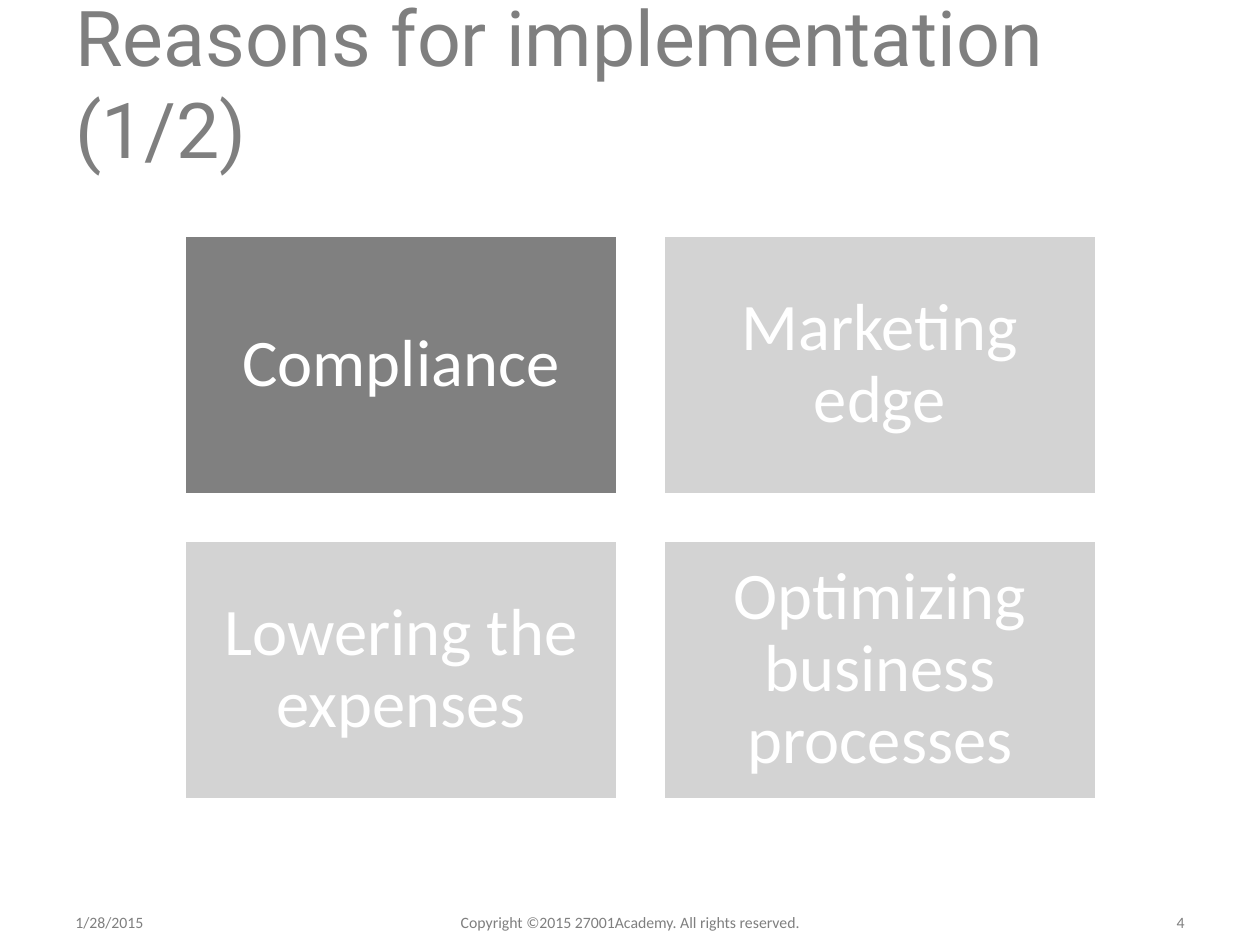
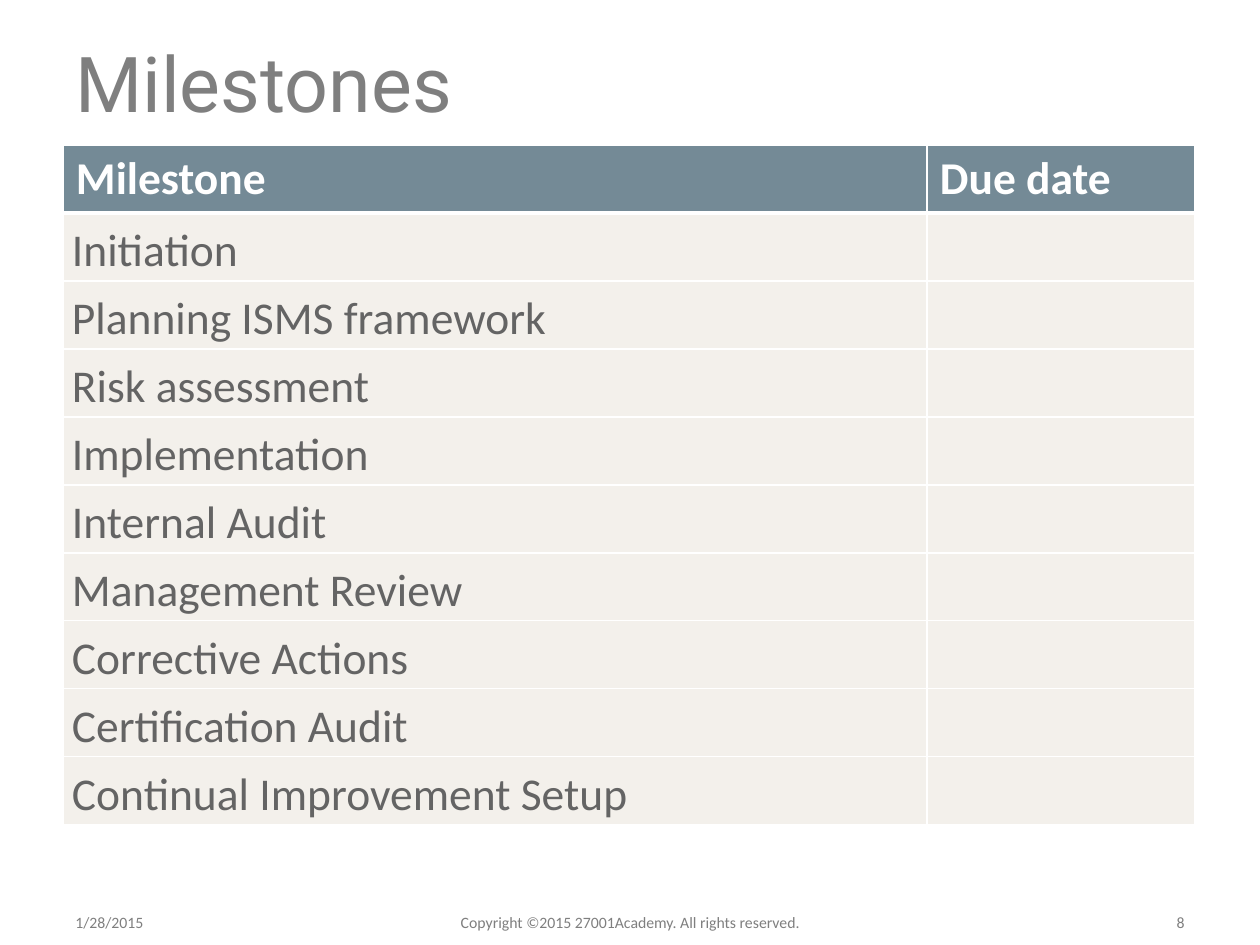
from lxml.etree import SubElement
from pptx import Presentation
from pptx.dml.color import RGBColor
from pptx.enum.shapes import MSO_SHAPE
from pptx.enum.text import MSO_ANCHOR, PP_ALIGN
from pptx.oxml.ns import qn
from pptx.util import Pt

EMU_PER_PX = 914400 / 126
COLORS = {
    "white": "FFFFFF",
    "muted": "7F7F7F",
    "card": "808080",
    "header": "748A96",
    "row": "F3F0EB",
    "body": "646464",
}
TITLE = {"name": "Roboto", "size": Pt(44), "color": "muted"}
FOOTER = {"name": "Calibri", "size": Pt(9), "color": "muted"}
CARD = {"name": "Calibri", "size": Pt(38), "color": "white"}
HEAD = {"name": "Calibri", "size": Pt(26), "color": "white", "bold": True}
BODY = {"name": "Calibri", "size": Pt(26), "color": "body", "bold": False}


def px(n):
    return round(n * EMU_PER_PX)


def rgb(name):
    return RGBColor.from_string(COLORS[name])


class Deck:
    def __init__(self):
        self.prs = Presentation()
        self.prs.slide_width, self.prs.slide_height = px(1260), px(945)

    def slide(self, title, number):
        self.s = self.prs.slides.add_slide(self.prs.slide_layouts[6])
        self.text(title, (63, 0, 1134, 164), TITLE)
        self.text("1/28/2015", (63, 899, 294, 46), FOOTER)
        self.text("Copyright ©2015 27001Academy. All rights reserved.",
                  (382, 899, 496, 46), FOOTER, PP_ALIGN.CENTER)
        self.text(str(number), (903, 899, 294, 46), FOOTER, PP_ALIGN.RIGHT)

    def put_text(self, tf, text, style, align=PP_ALIGN.LEFT, spacing=None):
        p = tf.paragraphs[0]
        p.alignment = align
        p.line_spacing = spacing
        r = p.add_run()
        r.text = text
        for key, value in style.items():
            if key == "color":
                r.font.color.rgb = rgb(value)
            else:
                setattr(r.font, key, value)

    def margins(self, target, x, y):
        target.margin_left = target.margin_right = px(x)
        target.margin_top = target.margin_bottom = px(y)

    def text(self, text, box, style, align=PP_ALIGN.LEFT):
        tf = self.s.shapes.add_textbox(*map(px, box)).text_frame
        tf.word_wrap = True
        tf.vertical_anchor = MSO_ANCHOR.MIDDLE
        self.put_text(tf, text, style, align)

    def rect(self, box, color):
        sp = self.s.shapes.add_shape(MSO_SHAPE.RECTANGLE, *map(px, box))
        sp.shadow.inherit = False
        sp.fill.solid()
        sp.fill.fore_color.rgb = rgb(color)
        sp.line.fill.background()
        return sp

    def card(self, text, box):
        sp = self.rect(box, "card")
        sp.line.color.rgb = rgb("white")
        sp.line.width = Pt(2)
        tf = sp.text_frame
        tf.word_wrap = True
        tf.vertical_anchor = MSO_ANCHOR.MIDDLE
        self.margins(tf, 20, 20)
        self.put_text(tf, text, CARD, PP_ALIGN.CENTER, 0.9)

    def veil(self, box, percent):
        sp = self.rect(box, "white")
        color = next(sp._element.spPr.iter(qn("a:srgbClr")))
        SubElement(color, qn("a:alpha"), val=str(percent * 1000))

    def borders(self, cell, widths):
        tcPr = cell._tc.get_or_add_tcPr()
        for side, width in widths.items():
            ln = SubElement(tcPr, qn(f"a:ln{side}"), w=str(int(Pt(width))))
            fill = SubElement(ln, qn("a:solidFill"))
            SubElement(fill, qn("a:srgbClr"), val=COLORS["white"])

    def table(self, left, top, widths, row_height, rows):
        box = (left, top, sum(widths), row_height * len(rows))
        table = self.s.shapes.add_table(len(rows), len(widths), *map(px, box)).table
        table.horz_banding = False
        for column, width in zip(table.columns, widths):
            column.width = px(width)
        for i, texts in enumerate(rows):
            table.rows[i].height = px(row_height)
            for j, text in enumerate(texts):
                cell = table.cell(i, j)
                self.borders(cell, {"L": 1, "R": 1, "T": 3 if i == 1 else 1,
                                    "B": 3 if i == 0 else 1})
                cell.fill.solid()
                cell.fill.fore_color.rgb = rgb("row" if i else "header")
                cell.vertical_anchor = MSO_ANCHOR.MIDDLE
                self.margins(cell, *((9, 0) if i else (13, 6)))
                if text:
                    self.put_text(cell.text_frame, text, BODY if i else HEAD,
                                  spacing=1.15 if i else None)


def reasons(deck):
    deck.slide("Reasons for implementation (1/2)", 4)
    names = ["Compliance", "Marketing edge", "Lowering the expenses",
             "Optimizing business processes"]
    for i, name in enumerate(names):
        row, col = divmod(i, 2)
        deck.card(name, (184 + 479 * col, 235 + 305 * row, 434, 260))
    for left, top in [(636, 224), (131, 522), (626, 522)]:
        deck.veil((left, top, 512, 277), 66)


def milestones(deck):
    deck.slide("Milestones", 8)
    names = ["Initiation", "Planning ISMS framework", "Risk assessment",
             "Implementation", "Internal Audit", "Management Review",
             "Corrective Actions", "Certification Audit",
             "Continual Improvement Setup"]
    rows = [("Milestone", "Due date")] + [(name, "") for name in names]
    deck.table(63, 145, (864, 268), 68, rows)


def main():
    deck = Deck()
    reasons(deck)
    milestones(deck)
    deck.prs.save("out.pptx")


if __name__ == "__main__":
    main()
